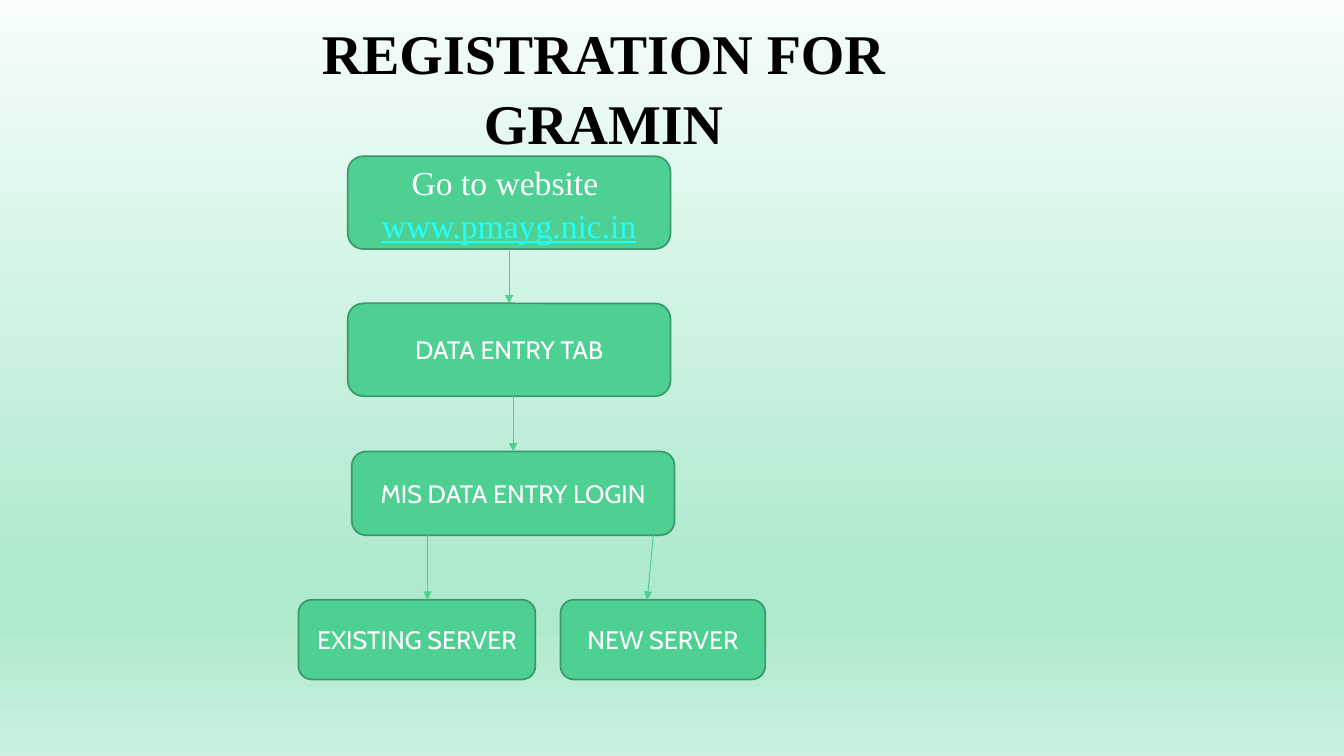
from dataclasses import dataclass

from lxml.etree import SubElement
from pptx import Presentation
from pptx.dml.color import RGBColor
from pptx.enum.shapes import MSO_CONNECTOR, MSO_SHAPE
from pptx.enum.text import MSO_ANCHOR, MSO_AUTO_SIZE, PP_ALIGN
from pptx.oxml.ns import qn
from pptx.util import Inches, Pt

# Content: step -> (lines, left, top, width, height)
TITLE = "REGISTRATION FOR GRAMIN"
STEPS = {
    "website": (["Go to website ", "www.pmayg.nic.in"], 3.45, 1.55, 3.2, 0.92),
    "tab": (["DATA ENTRY TAB"], 3.45, 3.01, 3.2, 0.92),
    "login": (["MIS DATA ENTRY LOGIN"], 3.49, 4.48, 3.2, 0.83),
    "existing": (["EXISTING SERVER"], 2.96, 5.95, 2.35, 0.79),
    "new": (["NEW SERVER"], 5.56, 5.95, 2.03, 0.79),
}
# Arrows: from step, to step, start x, end x (None means the middle of the side)
ARROWS = [
    ("website", "tab", None, None),
    ("tab", "login", 5.09, None),
    ("login", "existing", 4.24, 4.24),
    ("login", "new", 6.48, 6.42),
]


@dataclass(frozen=True)
class Theme:
    serif: str = "Times New Roman"
    sans: str = "Cabin"
    title_size: int = 40
    website_size: int = 24
    step_size: int = 18
    serif_spacing: float = 1.05
    black: str = "000000"
    white: str = "FFFFFF"
    link: str = "22FFFF"
    green: str = "4FD093"
    outline: str = "3A9A6D"
    backdrop: tuple = ((0, "F6FDFA"), (74, "B0EACE"), (83, "B0EACE"), (100, "CAF1DF"))


THEME = Theme()


def rgb(color):
    return RGBColor.from_string(color)


def format_text(p, font, size, color, bold=False):
    p.alignment = PP_ALIGN.CENTER
    if font == THEME.serif:
        p.line_spacing = THEME.serif_spacing
    for r in p.runs:
        r.font.name = font
        r.font.size = Pt(size)
        r.font.bold = bold
        r.font.color.rgb = rgb(color)


def paint_background(s):
    fill = s.background.fill
    fill.gradient()
    fill.gradient_angle = 270
    stops = next(s.background._cSld.iter(qn("a:gsLst")))
    for stop in list(stops):
        stops.remove(stop)
    for percent, color in THEME.backdrop:
        stop = SubElement(stops, qn("a:gs"), pos=str(percent * 1000))
        SubElement(stop, qn("a:srgbClr"), val=color)


def add_title(s):
    sp = s.shapes.title
    sp.left, sp.top, sp.width, sp.height = map(Inches, (2.57, 0.1, 6.83, 1.45))
    tf = sp.text_frame
    tf.text = TITLE
    tf.word_wrap = True
    tf.auto_size = MSO_AUTO_SIZE.NONE
    tf.vertical_anchor = MSO_ANCHOR.TOP
    format_text(tf.paragraphs[0], THEME.serif, THEME.title_size, THEME.black, True)


def add_step(s, lines, *box):
    sp = s.shapes.add_shape(MSO_SHAPE.ROUNDED_RECTANGLE, *map(Inches, box))
    sp.shadow.inherit = False
    sp.fill.solid()
    sp.fill.fore_color.rgb = rgb(THEME.green)
    sp.line.color.rgb = rgb(THEME.outline)
    sp.line.width = Pt(1.25)
    tf = sp.text_frame
    tf.text = "\n".join(lines)
    tf.word_wrap = True
    tf.vertical_anchor = MSO_ANCHOR.MIDDLE
    is_website = len(lines) > 1
    font, size = ((THEME.serif, THEME.website_size) if is_website
                  else (THEME.sans, THEME.step_size))
    for p in tf.paragraphs:
        is_address = p.text.startswith("www.")
        format_text(p, font, size, THEME.link if is_address else THEME.white)
        p.runs[0].font.underline = is_address
    return sp


def add_arrow(s, source, target, start_x, end_x):
    x1 = source.left + source.width // 2 if start_x is None else Inches(start_x)
    x2 = target.left + target.width // 2 if end_x is None else Inches(end_x)
    line = s.shapes.add_connector(MSO_CONNECTOR.STRAIGHT, x1,
                                  source.top + source.height, x2, target.top)
    if start_x is None:
        line.begin_connect(source, 2)
    if end_x is None:
        line.end_connect(target, 0)
    line.line.color.rgb = rgb(THEME.green)
    line.line.width = Pt(0.75)
    SubElement(line.line._get_or_add_ln(), qn("a:tailEnd"), type="triangle")
    SubElement(line._element.spPr, qn("a:effectLst"))


def main():
    prs = Presentation()
    prs.slide_width, prs.slide_height = Inches(13.33), Inches(7.5)
    s = prs.slides.add_slide(prs.slide_layouts[5])

    # Background and title
    paint_background(s)
    add_title(s)

    # Flow chart
    steps = {name: add_step(s, *step) for name, step in STEPS.items()}
    for source, target, start_x, end_x in ARROWS:
        add_arrow(s, steps[source], steps[target], start_x, end_x)

    prs.save("out.pptx")


if __name__ == "__main__":
    main()
